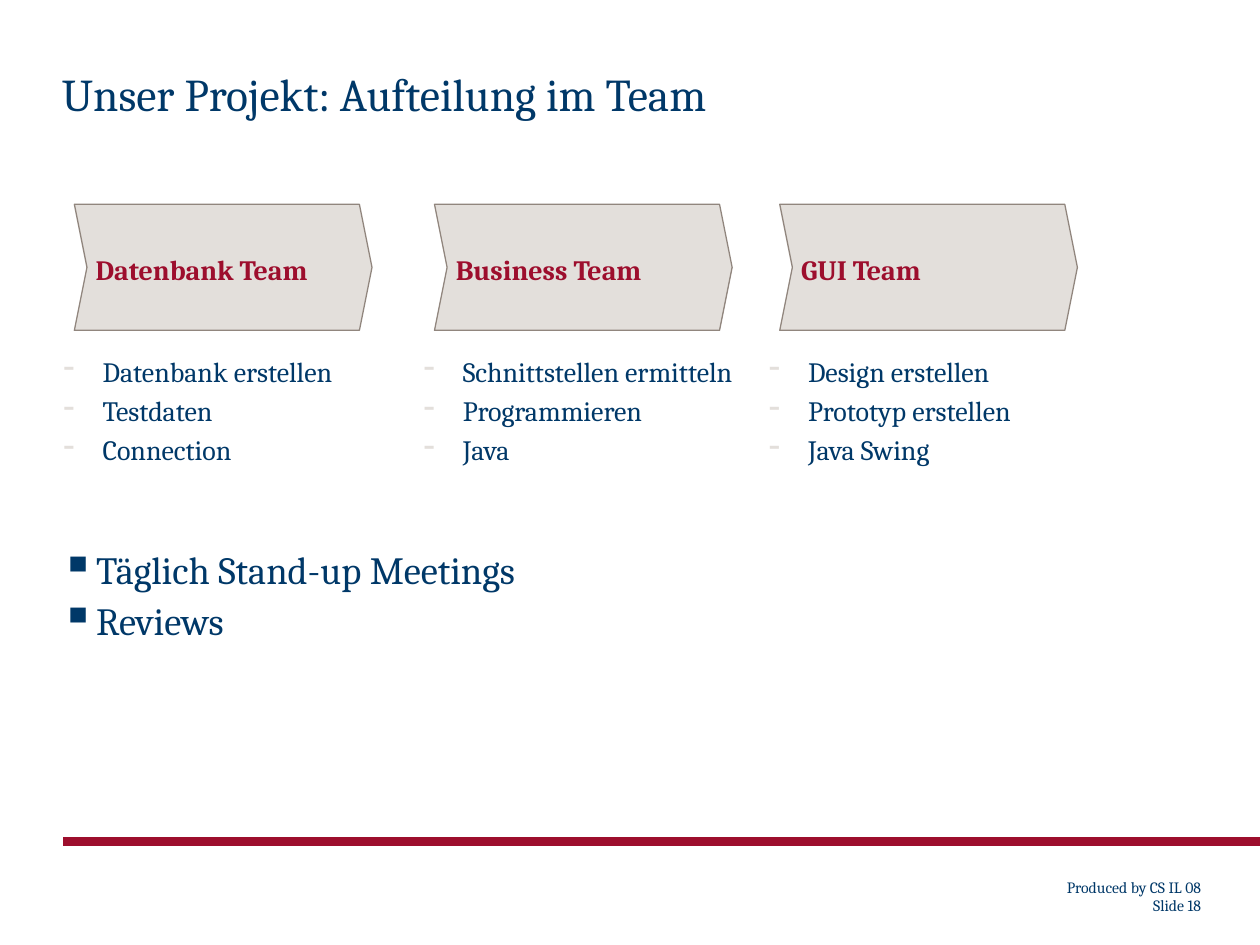
from lxml import etree
from pptx import Presentation
from pptx.dml.color import RGBColor
from pptx.enum.shapes import MSO_CONNECTOR, MSO_SHAPE
from pptx.enum.text import MSO_ANCHOR, PP_ALIGN
from pptx.oxml.ns import qn
from pptx.util import Cm, Pt

NAVY = RGBColor(0x00, 0x38, 0x68)
CRIMSON = RGBColor(0x9D, 0x0E, 0x2D)
SAND = RGBColor(0xE3, 0xDF, 0xDB)
TAUPE = RGBColor(0x91, 0x86, 0x7E)
STRAIGHT = MSO_CONNECTOR.STRAIGHT
CHEVRON = MSO_SHAPE.CHEVRON
MIDDLE, BOTTOM = MSO_ANCHOR.MIDDLE, MSO_ANCHOR.BOTTOM
RIGHT = PP_ALIGN.RIGHT

TITLE_FONT = {"name": "Cambria", "size": Pt(26)}
BODY_FONT = {"name": "Cambria", "size": Pt(22)}
TASK_FONT = {"name": "Cambria", "size": Pt(16)}
TEAM_FONT = {"name": "Cambria", "size": Pt(16), "bold": True}
FOOTER_FONT = {"name": "Cambria", "size": Pt(9)}

TEAMS = [
    (1.5, "Datenbank Team", ["Datenbank erstellen", "Testdaten", "Connection"]),
    (8.76, "Business Team", ["Schnittstellen ermitteln", "Programmieren", "Java"]),
    (15.72, "GUI Team", ["Design erstellen", "Prototyp erstellen", "Java Swing"]),
]


def add_text(position, lines, font_format, color=NAVY, frame_format={}, paragraph_format={}, space_before=0):
    shape = slide.shapes.add_textbox(*[Cm(length) for length in position])
    frame = shape.text_frame
    frame.word_wrap = True
    margins = dict.fromkeys(["margin_left", "margin_top", "margin_right", "margin_bottom"], 0)
    for name, value in {**margins, **frame_format}.items():
        setattr(frame, name, value)
    for index, line in enumerate(lines):
        paragraph = frame.add_paragraph() if index else frame.paragraphs[0]
        for name, value in paragraph_format.items():
            setattr(paragraph, name, value)
        if index and space_before:
            paragraph.space_before = Pt(space_before)
        run = paragraph.add_run()
        run.text = line
        for name, value in font_format.items():
            setattr(run.font, name, value)
        run.font.color.rgb = color
    return shape


def add_bullets(shape, character, color, indent):
    for paragraph in shape.text_frame.paragraphs:
        properties = paragraph._p.get_or_add_pPr()
        properties.set("marL", str(Cm(indent)))
        properties.set("indent", str(-Cm(indent)))
        bullet_color = etree.SubElement(properties, qn("a:buClr"))
        etree.SubElement(bullet_color, qn("a:srgbClr"), val=str(color))
        etree.SubElement(properties, qn("a:buSzPct"), val="120000")
        etree.SubElement(properties, qn("a:buChar"), char=character)


presentation = Presentation()
presentation.slide_width = Cm(25.4)
presentation.slide_height = Cm(19.05)
slide = presentation.slides.add_slide(presentation.slide_layouts[6])

footer_rule = slide.shapes.add_connector(STRAIGHT, Cm(1.27), Cm(16.97), Cm(25.4), Cm(16.97))
footer_rule.line.color.rgb = CRIMSON
footer_rule.line.width = Pt(5)
etree.SubElement(footer_rule._element.spPr, qn("a:effectLst"))

add_text(
    (19.33, 17.58, 4.88, 0.99), ["Produced by CS IL 08", "Slide 18"], FOOTER_FONT,
    frame_format={"vertical_anchor": BOTTOM, "margin_top": Cm(0.13), "margin_bottom": Cm(0.13)},
    paragraph_format={"alignment": RIGHT, "line_spacing": 0.94},
)
add_text(
    (1.25, 1.47, 22.89, 0.86), ["Unser Projekt: Aufteilung im Team"], TITLE_FONT,
    paragraph_format={"line_spacing": Pt(27)},
)
agreements = add_text(
    (1.23, 10.92, 23.57, 4.74), ["Täglich Stand-up Meetings", "Reviews"], BODY_FONT,
    paragraph_format={"line_spacing": 1.1},
)
add_bullets(agreements, "▪", NAVY, 0.71)

for left, team, tasks in TEAMS:
    task_list = add_text((left - 0.22, 7.14, 7.57, 3.23), tasks, TASK_FONT, space_before=3.2)
    add_bullets(task_list, "-", SAND, 0.79)

    chevron = slide.shapes.add_shape(CHEVRON, Cm(left), Cm(4.12), Cm(6), Cm(2.54))
    chevron.adjustments[0] = 0.1
    chevron.shadow.inherit = False
    chevron.fill.solid()
    chevron.fill.fore_color.rgb = SAND
    chevron.line.color.rgb = TAUPE
    chevron.line.width = Pt(0.75)

    add_text(
        (left + 0.43, 5.05, 5.13, 0.69), [team], TEAM_FONT, CRIMSON,
        {"vertical_anchor": MIDDLE}, {"line_spacing": 1.1},
    )

presentation.save("out.pptx")
